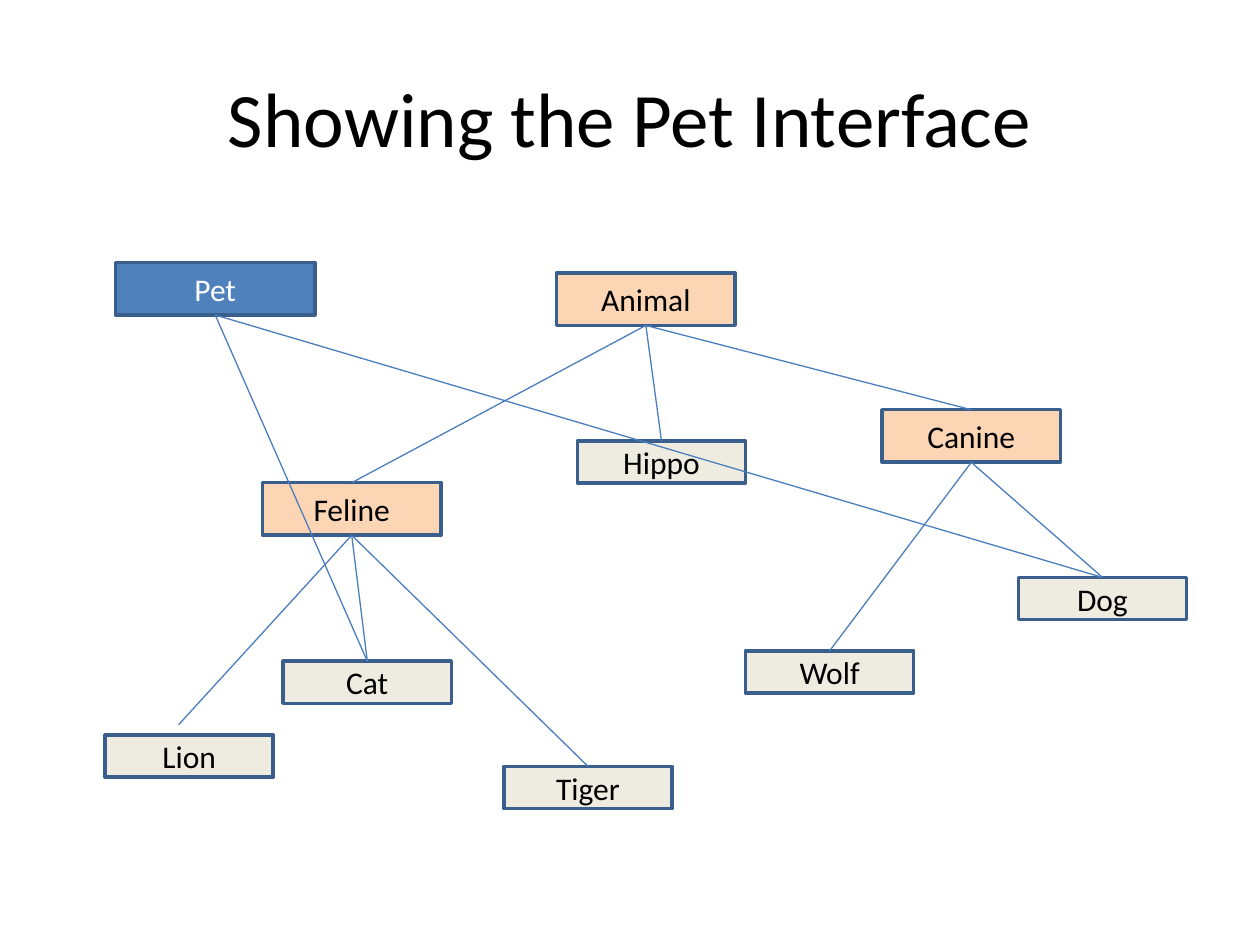
from pptx import Presentation
from pptx.dml.color import RGBColor
from pptx.enum.shapes import MSO_CONNECTOR, MSO_SHAPE
from pptx.enum.text import MSO_ANCHOR, PP_ALIGN
from pptx.oxml.ns import qn
from pptx.util import Cm, Pt
from lxml.etree import SubElement

TITLE = "Showing the Pet Interface"
CLASSES = [
    ("Animal", "abstract", 11.22, 5.5),
    ("Feline", "abstract", 5.29, 9.73),
    ("Canine", "abstract", 17.78, 8.26),
    ("Hippo", "concrete", 11.64, 8.89),
    ("Wolf", "concrete", 15.03, 13.12),
    ("Tiger", "concrete", 10.16, 15.45),
    ("Lion", "concrete", 2.12, 14.82),
    ("Cat", "concrete", 5.71, 13.33),
    ("Dog", "concrete", 20.53, 11.64),
]
INTERFACES = [("Pet", "interface", 2.33, 5.29)]
SUBCLASSES = {
    "Animal": ["Feline", "Hippo", "Canine"],
    "Feline": ["Lion", "Cat", "Tiger"],
    "Canine": ["Wolf", "Dog"],
}
IMPLEMENTERS = {"Pet": ["Dog", "Cat"]}
LOOSE_ENDS = {"Lion": (3.6, 14.61)}

THEME = {
    "font": "Calibri",
    "title_size": 44,
    "label_size": 18,
    "text": "000000",
    "border": "3A5F8C",
    "border_width": 2,
    "link": "4B7EBC",
    "link_width": 0.75,
    "kinds": {
        "abstract": {"size": (3.6, 1.06), "fill": "FCD5B5", "text": "000000"},
        "concrete": {"size": (3.39, 0.85), "fill": "EEECE1", "text": "000000"},
        "interface": {"size": (4.02, 1.06), "fill": "4F81BD", "text": "FFFFFF"},
    },
}
TOP, BOTTOM = 0, 2


def set_text(sp, text, size, color):
    tf = sp.text_frame
    for name, value in {"word_wrap": True, "vertical_anchor": MSO_ANCHOR.MIDDLE}.items():
        setattr(tf, name, value)
    p = tf.paragraphs[0]
    p.alignment = PP_ALIGN.CENTER
    r = p.add_run()
    r.text = text
    for name, value in {"name": THEME["font"], "size": Pt(size)}.items():
        setattr(r.font, name, value)
    r.font.color.rgb = RGBColor.from_string(color)


def set_line(sp, color, width):
    sp.line.color.rgb = RGBColor.from_string(color)
    sp.line.width = Pt(width)


def add_boxes(s, items):
    boxes = {}
    for label, kind, x, y in items:
        look = THEME["kinds"][kind]
        sp = s.shapes.add_shape(
            MSO_SHAPE.RECTANGLE, Cm(x), Cm(y), *map(Cm, look["size"]))
        sp.shadow.inherit = False
        sp.fill.solid()
        sp.fill.fore_color.rgb = RGBColor.from_string(look["fill"])
        set_line(sp, THEME["border"], THEME["border_width"])
        set_text(sp, label, THEME["label_size"], look["text"])
        boxes[label] = sp
    return boxes


def top_center(sp):
    return sp.left + sp.width // 2, sp.top


def add_links(s, boxes, tree):
    for parent, children in tree.items():
        start = boxes[parent]
        x, y = top_center(start)
        for child in children:
            loose = LOOSE_ENDS.get(child)
            end = map(Cm, loose) if loose else top_center(boxes[child])
            link = s.shapes.add_connector(
                MSO_CONNECTOR.STRAIGHT, x, y + start.height, *end)
            link.begin_connect(start, BOTTOM)
            if not loose:
                link.end_connect(boxes[child], TOP)
            set_line(link, THEME["link"], THEME["link_width"])
            SubElement(link._element.spPr, qn("a:effectLst"))


def main():
    prs = Presentation()
    prs.slide_width, prs.slide_height = Cm(25.4), Cm(19.05)
    s = prs.slides.add_slide(prs.slide_layouts[6])
    title = s.shapes.add_textbox(Cm(1.27), Cm(0.76), Cm(22.86), Cm(3.18))
    set_text(title, TITLE, THEME["title_size"], THEME["text"])
    boxes = add_boxes(s, CLASSES)
    add_links(s, boxes, SUBCLASSES)
    boxes.update(add_boxes(s, INTERFACES))
    add_links(s, boxes, IMPLEMENTERS)
    prs.save("out.pptx")


if __name__ == "__main__":
    main()
